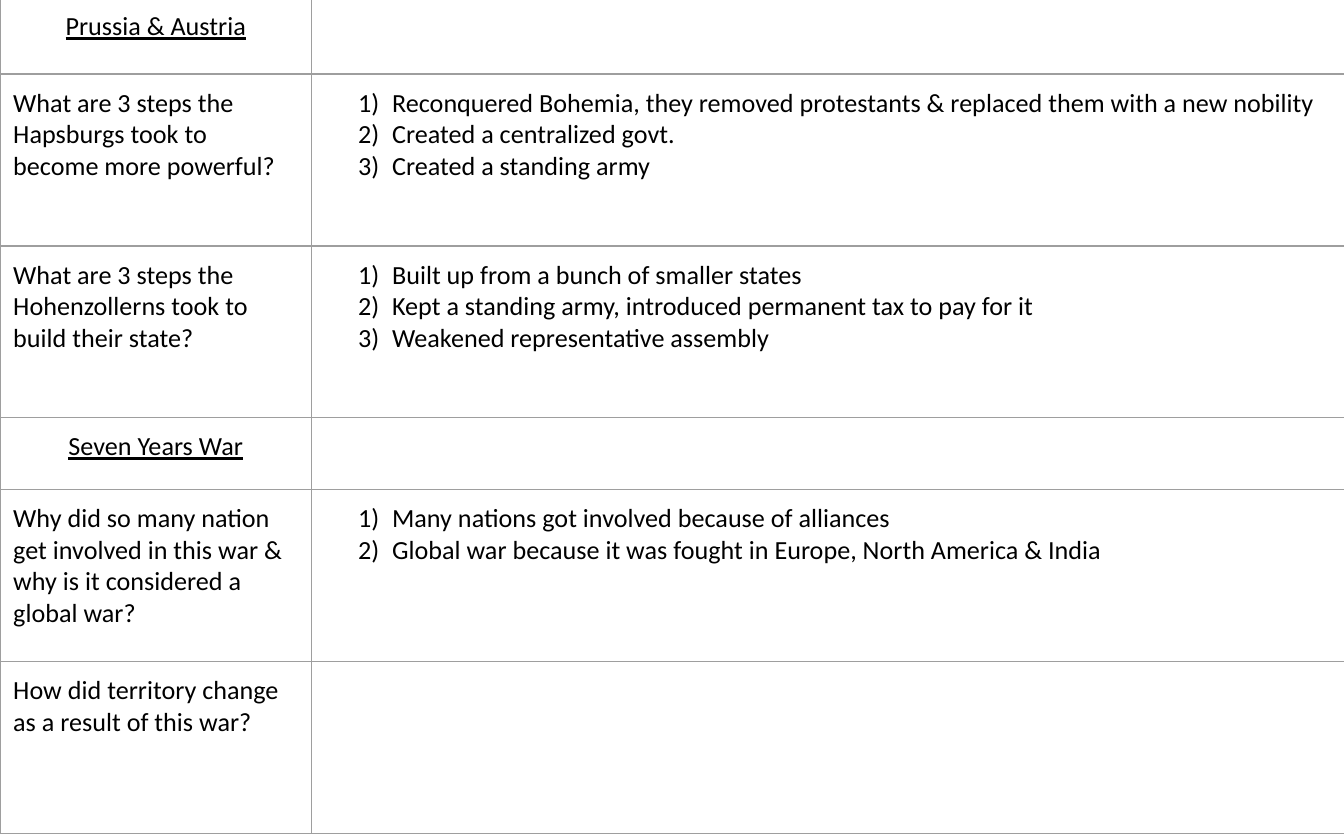
"""Build a study-guide table on Prussia, Austria and the Seven Years War."""
from lxml import etree
from pptx import Presentation
from pptx.dml.color import RGBColor
from pptx.enum.text import PP_ALIGN
from pptx.oxml.ns import qn
from pptx.util import Cm, Pt

CENTER, LEFT = PP_ALIGN.CENTER, PP_ALIGN.LEFT
COLORS = {"text": "000000", "border": "9E9E9E"}
FONT, FONT_SIZE = "Calibri", Pt(14)
BORDER_WIDTH = Pt(0.75)
CELL_MARGIN = Cm(0.25)
COLUMN_WIDTHS = [5.89, 19.56]
TABLE_TOP = -0.05

# Each section: heading, row height, then questions with their answers.
SECTIONS = [
    ("Prussia & Austria", 1.45, [
        ("What are 3 steps the Hapsburgs took to become more powerful?", [
            "Reconquered Bohemia, they removed protestants & replaced them with a new nobility",
            "Created a centralized govt.",
            "Created a standing army",
        ]),
        ("What are 3 steps the Hohenzollerns took to build their state?", [
            "Built up from a bunch of smaller states",
            "Kept a standing army, introduced permanent tax to pay for it",
            "Weakened representative assembly",
        ]),
    ]),
    ("Seven Years War", 1.35, [
        ("Why did so many nation get involved in this war & why is it considered a global war?", [
            "Many nations got involved because of alliances",
            "Global war because it was fought in Europe, North America & India",
        ]),
        ("How did territory change as a result of this war?", []),
    ]),
]
QUESTION_HEIGHT = 3.25


def write_paragraph(paragraph, text, align=LEFT, underline=False, numbered=False):
    """Write one formatted paragraph, numbered 1), 2), ... on request."""
    paragraph.alignment = align
    run = paragraph.add_run()
    run.text = text
    run.font.name = FONT
    run.font.size = FONT_SIZE
    run.font.underline = underline
    run.font.color.rgb = RGBColor.from_string(COLORS["text"])
    if numbered:
        properties = paragraph._p.get_or_add_pPr()
        properties.set("marL", str(Cm(1.27)))
        properties.set("indent", str(-Cm(0.64)))
        etree.SubElement(properties, qn("a:buFont"), typeface=FONT)
        etree.SubElement(properties, qn("a:buAutoNum"), type="arabicParenR")


def format_cell(cell):
    """Set the margins, the borders and the empty fill of a cell."""
    cell.margin_left = cell.margin_right = CELL_MARGIN
    cell.margin_top = cell.margin_bottom = CELL_MARGIN
    properties = cell._tc.get_or_add_tcPr()
    for side in ("L", "R", "T", "B"):
        line = etree.SubElement(properties, qn(f"a:ln{side}"), w=str(BORDER_WIDTH))
        fill = etree.SubElement(line, qn("a:solidFill"))
        etree.SubElement(fill, qn("a:srgbClr"), val=COLORS["border"])
    cell.fill.background()


def main():
    """Lay out the sections as table rows and save the presentation."""
    rows = []
    for heading, height, questions in SECTIONS:
        rows.append((height, heading, [], {"align": CENTER, "underline": True}))
        rows += [(QUESTION_HEIGHT, question, answers, {}) for question, answers in questions]

    presentation = Presentation()
    presentation.slide_width, presentation.slide_height = Cm(25.4), Cm(15.88)
    slide = presentation.slides.add_slide(presentation.slide_layouts[6])
    table_width = sum(COLUMN_WIDTHS)
    table_height = sum(row[0] for row in rows)
    table = slide.shapes.add_table(
        len(rows), len(COLUMN_WIDTHS), 0, Cm(TABLE_TOP), Cm(table_width), Cm(table_height)
    ).table
    table.first_row = table.horz_banding = False
    for column, width in zip(table.columns, COLUMN_WIDTHS):
        column.width = Cm(width)

    for table_row, (height, label, answers, label_format) in zip(table.rows, rows):
        table_row.height = Cm(height)
        label_cell, answer_cell = table_row.cells
        format_cell(label_cell)
        format_cell(answer_cell)
        write_paragraph(label_cell.text_frame.paragraphs[0], label, **label_format)
        frame = answer_cell.text_frame
        frame.paragraphs[0].font.size = FONT_SIZE
        for index, answer in enumerate(answers):
            paragraph = frame.add_paragraph() if index else frame.paragraphs[0]
            paragraph._p.remove_all("a:pPr")
            write_paragraph(paragraph, answer, numbered=True)

    presentation.save("out.pptx")


if __name__ == "__main__":
    main()
